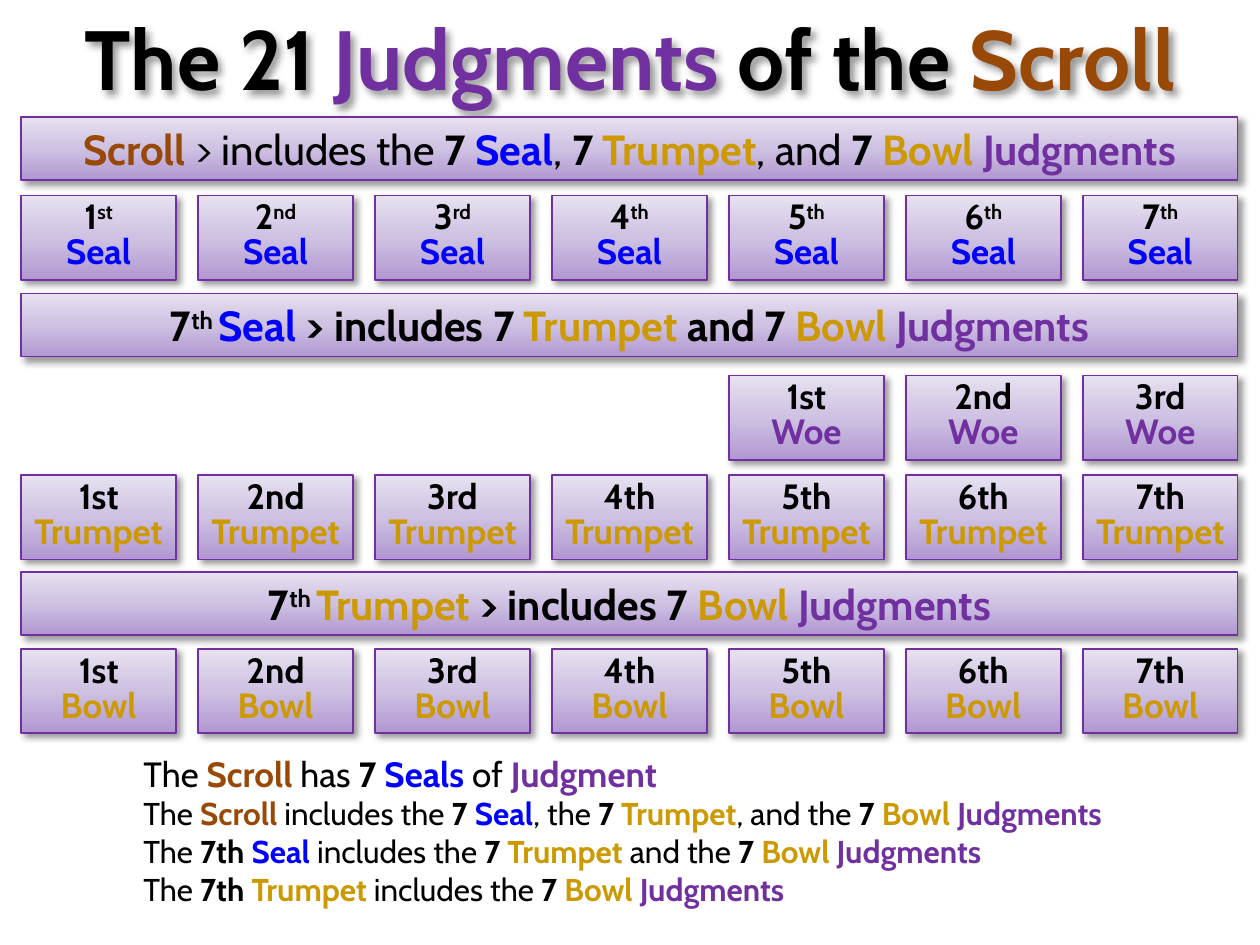
import copy
from dataclasses import dataclass
from typing import NamedTuple, Optional, Sequence

import pptx
import pptx.dml.color
import pptx.enum.shapes
import pptx.enum.text
import pptx.oxml
import pptx.oxml.ns
import pptx.util

Cm, Pt = pptx.util.Cm, pptx.util.Pt
PP_ALIGN = pptx.enum.text.PP_ALIGN
MSO_ANCHOR = pptx.enum.text.MSO_ANCHOR


@dataclass(frozen=True)
class Theme:
    font: str = "Cabin"
    ink: str = "000000"
    scroll: str = "984807"
    seal: str = "0000FF"
    gold: str = "CC9900"
    purple: str = "7030A0"
    gradient: tuple = ((0, "B197D2"), (0.5, "CEC1E2"), (1, "E7E1F0"))
    title_size: int = 48
    banner_size: int = 24
    tile_size: int = 20
    lead_size: int = 20
    note_size: int = 18


THEME = Theme()


class Run(NamedTuple):
    text: str
    color: str = THEME.ink
    bold: bool = True
    raised: bool = False


class Banner(NamedTuple):
    top: float
    runs: Sequence[Run]


class TileRow(NamedTuple):
    top: float
    label: str
    color: str
    first_column: int = 0
    count: int = 7
    raised: bool = False


LEFT, FULL_WIDTH, BANNER_HEIGHT = 0.43, 24.52, 1.27
TILE_WIDTH, TILE_HEIGHT, COLUMNS = 3.12, 1.7, 7
PITCH = (FULL_WIDTH - TILE_WIDTH) / (COLUMNS - 1)
SUFFIXES = ("st", "nd", "rd", "th", "th", "th", "th")


def plain(text: str) -> Run:
    return Run(text, bold=False)


SCROLL = Run("Scroll", THEME.scroll)
SEAL = Run("Seal", THEME.seal)
TRUMPET = Run("Trumpet", THEME.gold)
SEVEN = Run("7 ")
SEVENTH = Run("7th ")
SEVEN_TRUMPET = (SEVEN, TRUMPET)
SEVEN_BOWL_JUDGMENTS = (SEVEN, Run("Bowl ", THEME.gold), Run("Judgments", THEME.purple))
RAISED_SEVENTH = (Run("7"), Run("th ", raised=True))

TITLE = (Run("The 21 "), Run("Judgments ", THEME.purple), Run("of the "), SCROLL)
BANNERS = (
    Banner(2.36, (SCROLL, plain(" > includes the "), SEVEN, SEAL, plain(", "),
                  *SEVEN_TRUMPET, plain(", and "), *SEVEN_BOWL_JUDGMENTS)),
    Banner(5.92, (*RAISED_SEVENTH, SEAL, Run(" > includes "), *SEVEN_TRUMPET,
                  Run(" and "), *SEVEN_BOWL_JUDGMENTS)),
    Banner(11.53, (*RAISED_SEVENTH, TRUMPET, Run(" > includes "), *SEVEN_BOWL_JUDGMENTS)),
)
TILE_ROWS = (
    TileRow(3.94, "Seal", THEME.seal, raised=True),
    TileRow(7.57, "Woe", THEME.purple, first_column=4, count=3),
    TileRow(9.58, "Trumpet", THEME.gold),
    TileRow(13.08, "Bowl", THEME.gold),
)
SUMMARY = (
    (plain("The "), SCROLL, plain(" has "), SEVEN, Run("Seals", THEME.seal),
     plain(" of "), Run("Judgment", THEME.purple)),
    (plain("The "), SCROLL, plain(" includes the "), SEVEN, SEAL, plain(", the "),
     *SEVEN_TRUMPET, plain(", and the "), *SEVEN_BOWL_JUDGMENTS),
    (plain("The "), SEVENTH, SEAL, plain(" includes the "), *SEVEN_TRUMPET,
     plain(" and the "), *SEVEN_BOWL_JUDGMENTS),
    (plain("The "), SEVENTH, TRUMPET, plain(" includes the "), *SEVEN_BOWL_JUDGMENTS),
)


def rgb(color: str) -> pptx.dml.color.RGBColor:
    return pptx.dml.color.RGBColor.from_string(color)


def add_shadow(shape) -> None:
    shape.shadow.inherit = False
    effects = shape.element.spPr.find(pptx.oxml.ns.qn("a:effectLst"))
    effects.append(pptx.oxml.parse_xml(
        f'<a:outerShdw {pptx.oxml.ns.nsdecls("a")} blurRad="{Pt(4)}" dist="{Pt(3)}" '
        f'dir="{45 * 60000}" algn="tl" rotWithShape="0">'
        f'<a:srgbClr val="{THEME.ink}"><a:alpha val="40000"/></a:srgbClr></a:outerShdw>'))


def write_lines(shape, lines: Sequence[Sequence[Run]], sizes: Sequence[int],
                align: PP_ALIGN = PP_ALIGN.CENTER, anchor: MSO_ANCHOR = MSO_ANCHOR.TOP,
                wrap: bool = True, spacing: Optional[int] = None) -> None:
    """Fill a shape with one paragraph per line, each with its own type size."""
    frame = shape.text_frame
    frame.word_wrap = wrap
    frame.auto_size = pptx.enum.text.MSO_AUTO_SIZE.SHAPE_TO_FIT_TEXT
    frame.vertical_anchor = anchor
    for index, (line, size) in enumerate(zip(lines, sizes)):
        paragraph = frame.add_paragraph() if index else frame.paragraphs[0]
        paragraph.alignment = align
        paragraph.font.name = THEME.font
        paragraph.font.size = Pt(size)
        if spacing:
            paragraph.line_spacing = Pt(spacing)
        for part in line:
            run = paragraph.add_run()
            run.text = part.text
            run.font.bold = part.bold
            run.font.color.rgb = rgb(part.color)
            if part.raised:
                run.font._element.set("baseline", "30000")


def add_panel(slide, left: float, top: float, width: float, height: float):
    """Add a purple gradient rectangle with a border and shadow."""
    panel = slide.shapes.add_shape(pptx.enum.shapes.MSO_SHAPE.RECTANGLE,
                                   Cm(left), Cm(top), Cm(width), Cm(height))
    panel.fill.gradient()
    panel.fill.gradient_angle = 90
    stops = panel.element.spPr.find(".//" + pptx.oxml.ns.qn("a:gsLst"))
    stops.insert(1, copy.deepcopy(stops[0]))
    for stop, (position, color) in zip(panel.fill.gradient_stops, THEME.gradient):
        stop.position = position
        stop.color.rgb = rgb(color)
    panel.line.color.rgb = rgb(THEME.purple)
    panel.line.width = Pt(1)
    add_shadow(panel)
    return panel


def add_title(slide) -> None:
    title = slide.shapes.title
    title.left, title.top, title.width, title.height = Cm(0), Cm(0), Cm(25.4), Cm(2.31)
    add_shadow(title)
    write_lines(title, [TITLE], [THEME.title_size])


def add_banner(slide, banner: Banner) -> None:
    panel = add_panel(slide, LEFT, banner.top, FULL_WIDTH, BANNER_HEIGHT)
    write_lines(panel, [banner.runs], [THEME.banner_size], anchor=MSO_ANCHOR.MIDDLE)


def add_tile_row(slide, row: TileRow) -> None:
    for index, suffix in enumerate(SUFFIXES[:row.count]):
        left = LEFT + (row.first_column + index) * PITCH
        tile = add_panel(slide, left, row.top, TILE_WIDTH, TILE_HEIGHT)
        number = str(index + 1)
        ordinal = ([Run(number), Run(suffix, raised=True)] if row.raised
                   else [Run(number + suffix)])
        write_lines(tile, [ordinal, [Run(row.label, row.color)]], [THEME.tile_size] * 2,
                    wrap=False, spacing=THEME.tile_size)


def add_summary(slide) -> None:
    summary = slide.shapes.add_textbox(Cm(2.64), Cm(15.04), Cm(21.97), Cm(3.43))
    sizes = [THEME.lead_size] + [THEME.note_size] * (len(SUMMARY) - 1)
    write_lines(summary, SUMMARY, sizes, align=PP_ALIGN.LEFT)


def main() -> None:
    deck = pptx.Presentation()
    deck.slide_width, deck.slide_height = Cm(25.4), Cm(19.05)
    slide = deck.slides.add_slide(deck.slide_layouts[5])
    add_title(slide)
    for row in TILE_ROWS:
        add_tile_row(slide, row)
    for banner in BANNERS:
        add_banner(slide, banner)
    add_summary(slide)
    deck.save("out.pptx")


if __name__ == "__main__":
    main()
